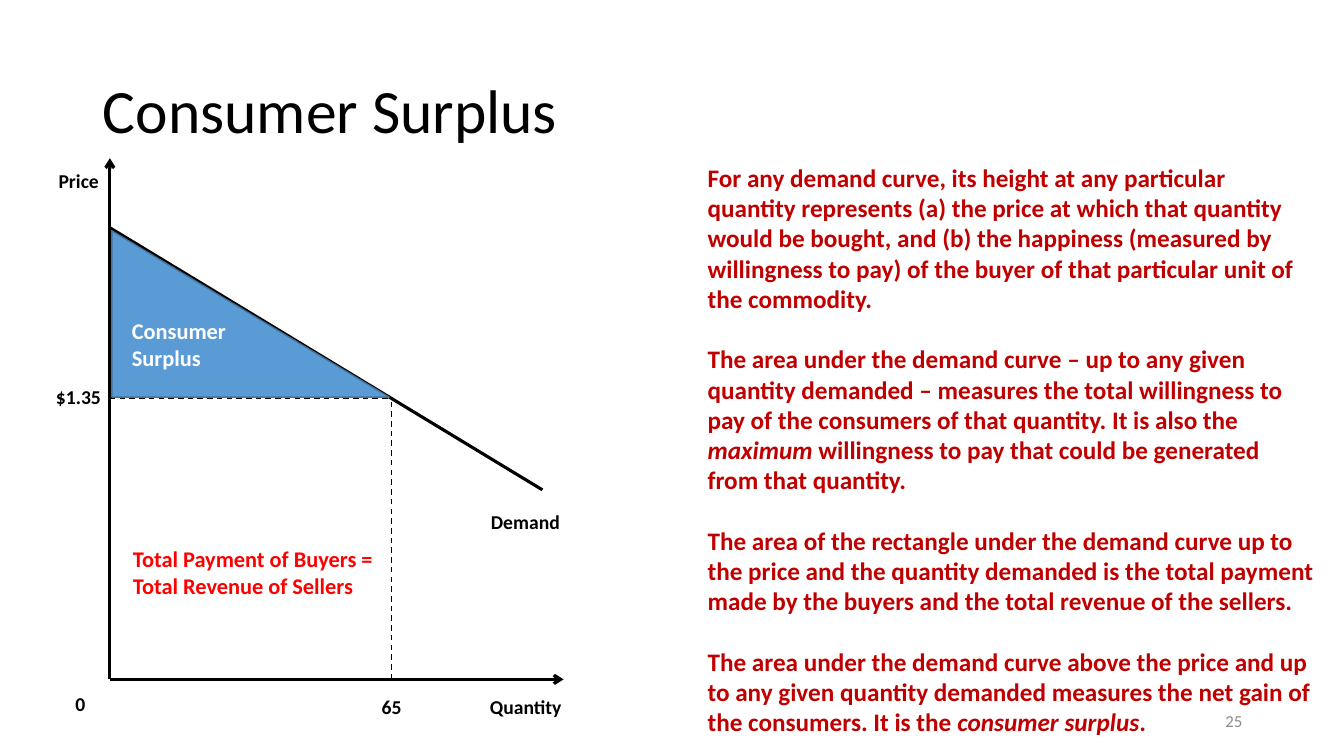
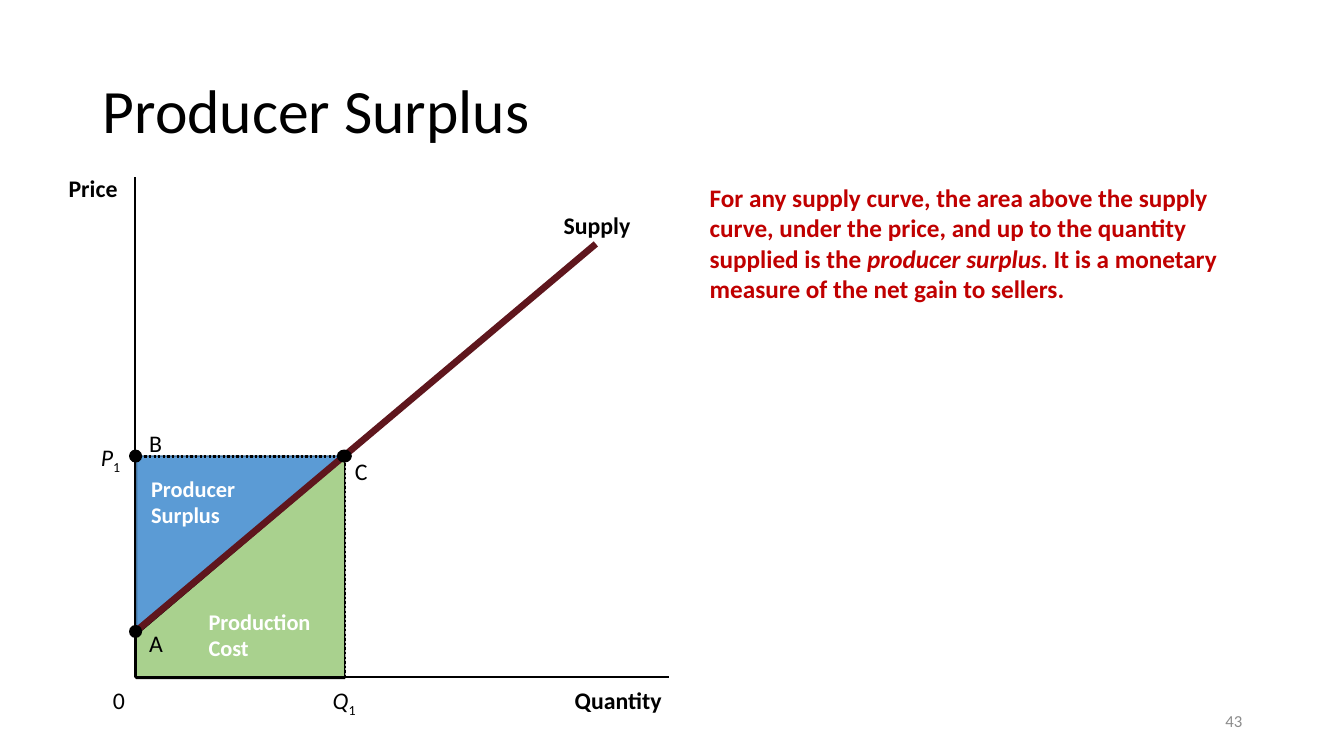
from dataclasses import dataclass

from lxml.etree import SubElement
from pptx import Presentation
from pptx.dml.color import RGBColor
from pptx.enum.dml import MSO_LINE as Dash
from pptx.enum.shapes import MSO_CONNECTOR as Connector, MSO_SHAPE as Preset
from pptx.enum.text import MSO_ANCHOR as Anchor, MSO_AUTO_SIZE as Fit, PP_ALIGN as Align
from pptx.oxml.ns import qn
from pptx.util import Pt

PX = 9144
SLIDE_WIDTH, SLIDE_HEIGHT = 1333, 750
TITLE_ONLY = 5


@dataclass(frozen=True)
class Theme:
    font: str = "Calibri"
    ink: str = "000000"
    page: str = "8C8C8C"
    comment: str = "C00000"
    payment: str = "FF0000"
    on_area: str = "FFFFFF"
    surplus: str = "5B9BD5"
    surplus_edge: str = "43739E"
    cost: str = "A9D18E"
    supply: str = "5F161D"
    title_size: float = 44
    comment_size: float = 18
    symbol_size: float = 17
    area_size: float = 16
    axis_size: float = 14
    page_size: float = 12
    paragraph_gap: float = 21.6
    thin: float = 1
    axis: float = 1.63
    bold_axis: float = 2.25
    curve: float = 4.75


THEME = Theme()


@dataclass(frozen=True)
class Piece:
    text: str
    italic: bool = False
    baseline: int = 0


def text_style(size, color=THEME.ink, bold=True):
    return {"name": THEME.font, "size": Pt(size), "bold": bold, "color": color}


TITLE = text_style(THEME.title_size, bold=False)
PAGE = text_style(THEME.page_size, THEME.page, bold=False)
COMMENT = text_style(THEME.comment_size, THEME.comment)
AXIS = text_style(THEME.axis_size)
SYMBOL = text_style(THEME.symbol_size, bold=False)
SYMBOL_BOLD = text_style(THEME.symbol_size)
AREA = text_style(THEME.area_size, THEME.on_area)
PAYMENT = text_style(THEME.area_size, THEME.payment)


def assign(target, values):
    for attribute, value in values.items():
        if attribute == "color":
            target.color.rgb = RGBColor.from_string(value)
        else:
            setattr(target, attribute, value)


def fill_paragraph(paragraph, pieces, style, layout):
    assign(paragraph, layout)
    for piece in pieces:
        run = paragraph.add_run()
        run.text = piece.text
        assign(run.font, style | {"italic": piece.italic})
        if piece.baseline:
            run._r.get_or_add_rPr().set("baseline", str(piece.baseline))


def stroke(line, color, width, dash=None):
    assign(line, {"color": color, "width": Pt(width), "dash_style": dash})


@dataclass
class Region:
    slide: object
    left: int
    top: int
    width: int
    height: int

    def place(self, x, y):
        return (self.left + x) * PX, (self.top + y) * PX

    def text(self, box, paragraphs, style, align=Align.LEFT, tight=False, anchor=Anchor.TOP):
        x, y, width, height = box
        frame = self.slide.shapes.add_textbox(
            *self.place(x, y), width * PX, height * PX).text_frame
        assign(frame, {"word_wrap": not tight, "vertical_anchor": anchor})
        if tight:
            assign(frame, dict.fromkeys(
                ("margin_left", "margin_top", "margin_right", "margin_bottom"), 0))
        for index, pieces in enumerate(paragraphs):
            paragraph = frame.add_paragraph() if index else frame.paragraphs[0]
            gap = Pt(THEME.paragraph_gap if index else 0)
            fill_paragraph(paragraph, pieces, style, {"alignment": align, "space_before": gap})

    def label(self, box, words, style, align=Align.LEFT, tight=False):
        self.text(box, [[Piece(words)]], style, align, tight)

    def line(self, start, end, color, width, dash=None, arrow=False):
        connector = self.slide.shapes.add_connector(
            Connector.STRAIGHT, *self.place(*start), *self.place(*end))
        stroke(connector.line, color, width, dash)
        properties = connector._element.spPr
        if arrow:
            SubElement(properties.find(qn("a:ln")), qn("a:tailEnd"), type="arrow")
        SubElement(properties, qn("a:effectLst"))

    def shape(self, preset, box, fill, edge=None, rotation=0):
        x, y, width, height = box
        area = self.slide.shapes.add_shape(
            preset, *self.place(x, y), width * PX, height * PX)
        assign(area, {"rotation": rotation})
        self.finish(area, fill, edge, THEME.thin)

    def outline(self, points, width, fill=None, dash=None):
        spots = [(self.left + x, self.top + y) for x, y in points]
        builder = self.slide.shapes.build_freeform(*spots[0], scale=PX)
        builder.add_line_segments(spots[1:], close=fill is not None)
        self.finish(builder.convert_to_shape(), fill, THEME.ink, width, dash)

    def finish(self, area, fill, edge, width, dash=None):
        area.shadow.inherit = False
        if fill:
            area.fill.solid()
            area.fill.fore_color.rgb = RGBColor.from_string(fill)
        else:
            area.fill.background()
        if edge:
            stroke(area.line, edge, width, dash)
        else:
            area.line.fill.background()


def title_slide(deck, heading, page):
    slide = deck.slides.add_slide(deck.slide_layouts[TITLE_ONLY])
    title = slide.shapes.title
    assign(title, {"left": 92 * PX, "top": 40 * PX, "width": 1150 * PX, "height": 145 * PX})
    assign(title.text_frame, {"vertical_anchor": Anchor.MIDDLE, "auto_size": Fit.NONE})
    fill_paragraph(title.text_frame.paragraphs[0], [Piece(heading)], TITLE,
                   {"alignment": Align.LEFT, "line_spacing": 0.9})
    footer = Region(slide, 942, 695, 300, 40)
    footer.text((0, 0, footer.width, footer.height), [[Piece(page)]], PAGE,
                Align.RIGHT, anchor=Anchor.MIDDLE)
    return slide


def commentary(region, paragraphs):
    region.text((0, 0, region.width, region.height), paragraphs, COMMENT)


def demand_graph(region):
    right, floor = region.width, region.height
    intercept, quantity = 69, 279
    curve_end = (429, 329)
    price = round(intercept + quantity * (curve_end[1] - intercept) / curve_end[0])

    for tip in ((right, floor), (0, 0)):
        region.line((0, floor), tip, THEME.ink, THEME.bold_axis, arrow=True)
    region.line((0, intercept), curve_end, THEME.ink, THEME.bold_axis)
    for guide_start in ((0, price), (quantity, floor)):
        region.line(guide_start, (quantity, price), THEME.ink, THEME.thin, Dash.DASH)

    for box, words, align in (
        ((367, floor + 10, 121, 34), "Quantity", Align.LEFT),
        ((-91, 6, 90, 34), "Price", Align.RIGHT),
        ((368, 344, 121, 34), "Demand", Align.LEFT),
        ((-44, floor + 8, 46, 34), "0", Align.LEFT),
        ((quantity - 47, floor + 10, 95, 34), "65", Align.CENTER),
        ((-84, price - 18, 85, 34), "$1.35", Align.RIGHT),
    ):
        region.label(box, words, AXIS, align)

    region.shape(Preset.RIGHT_TRIANGLE,
                 (2, intercept + 3, quantity - 4, price - intercept - 4),
                 THEME.surplus, THEME.surplus_edge)
    region.label((12, 153, 142, 64), "Consumer Surplus", AREA)
    region.label((13, 379, 285, 64),
                 "Total Payment of Buyers = Total Revenue of Sellers", PAYMENT)


def supply_graph(region):
    right, floor = region.width, region.height
    quantity, price, intercept = 208, 277, 451

    region.outline([(1, floor + 1), (quantity, floor + 1), (quantity, price + 1),
                    (1, intercept + 3)], THEME.thin, THEME.cost)
    region.shape(Preset.RIGHT_TRIANGLE, (19, 259, 170, 205),
                 THEME.surplus, THEME.surplus_edge, rotation=90)
    region.outline([(0, 0), (0, floor), (right, floor)], THEME.axis)
    region.line((0, intercept), (457, 66), THEME.supply, THEME.curve)

    for x, y, width, letter, letter_x, letter_y in (
        (0, price, 13, "B", 14, 249),
        (0, intercept, 13, "A", 14, 448),
        (quantity - 1, price, 15, "C", 218, 277),
    ):
        region.shape(Preset.OVAL, (x - width // 2, y - 7, width, 13), THEME.ink)
        region.label((letter_x, letter_y, 13, 29), letter, SYMBOL, tight=True)

    region.outline([(0, price), (quantity, price), (quantity, floor)],
                   THEME.axis, dash=Dash.ROUND_DOT)
    for box, words, style in (
        ((436, floor + 8, 87, 29), "Quantity", SYMBOL_BOLD),
        ((-66, -4, 49, 29), "Price", SYMBOL_BOLD),
        ((425, 33, 67, 29), "Supply", SYMBOL_BOLD),
        ((-22, floor + 8, 12, 29), "0", SYMBOL),
    ):
        region.label(box, words, style, tight=True)
    for box, letter in (((196, floor + 8, 24, 29), "Q"), ((-34, 263, 20, 29), "P")):
        region.text(box, [[Piece(letter, italic=True), Piece("1", baseline=-25000)]],
                    SYMBOL, tight=True)
    region.label((63, 422, 142, 64), "Production Cost", AREA)
    region.label((6, 290, 142, 64), "Producer Surplus", AREA)


CONSUMER_NOTES = [
    [Piece("For any demand curve, its height at any particular quantity represents (a) the "
           "price at which that quantity would be bought, and (b) the happiness (measured by "
           "willingness to pay) of the buyer of that particular unit of the commodity.")],
    [Piece("The area under the demand curve – up to any given quantity demanded – measures the "
           "total willingness to pay of the consumers of that quantity. It is also the "),
     Piece("maximum ", italic=True),
     Piece("willingness to pay that could be generated from that quantity.")],
    [Piece("The area of the rectangle under the demand curve up to the price and the quantity "
           "demanded is the total payment made by the buyers and the total revenue of the "
           "sellers.")],
    [Piece("The area under the demand curve above the price and up to any given quantity "
           "demanded measures the net gain of the consumers. It is the "),
     Piece("consumer surplus", italic=True),
     Piece(".")],
]
PRODUCER_NOTES = [
    [Piece("For any supply curve, the area above the supply curve, under the price, and up to "
           "the quantity supplied is the "),
     Piece("producer surplus", italic=True),
     Piece(". It is a monetary measure of the net gain to sellers.")],
]


def main():
    deck = Presentation()
    assign(deck, {"slide_width": SLIDE_WIDTH * PX, "slide_height": SLIDE_HEIGHT * PX})

    consumer = title_slide(deck, "Consumer Surplus", "25")
    demand_graph(Region(consumer, 109, 157, 450, 517))
    commentary(Region(consumer, 692, 156, 623, 586), CONSUMER_NOTES)

    producer = title_slide(deck, "Producer Surplus", "43")
    supply_graph(Region(producer, 134, 176, 530, 496))
    commentary(Region(producer, 694, 176, 562, 131), PRODUCER_NOTES)

    deck.save("out.pptx")


if __name__ == "__main__":
    main()
